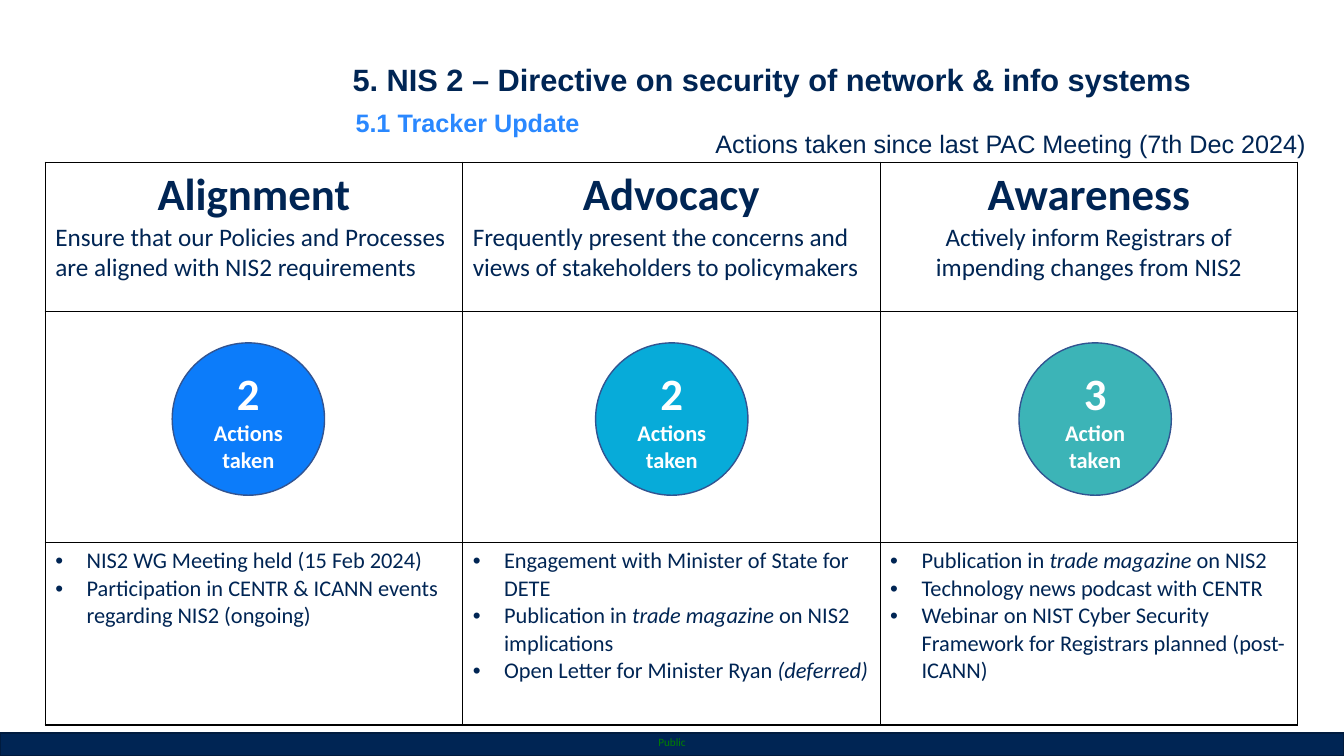
from dataclasses import dataclass

from lxml import etree
from pptx import Presentation
from pptx.dml.color import RGBColor
from pptx.enum.shapes import MSO_SHAPE
from pptx.enum.text import MSO_ANCHOR, MSO_AUTO_SIZE, PP_ALIGN
from pptx.oxml.ns import qn
from pptx.util import Cm, Pt

RECTANGLE, CIRCLE = MSO_SHAPE.RECTANGLE, MSO_SHAPE.OVAL
LEFT, CENTER = PP_ALIGN.LEFT, PP_ALIGN.CENTER
MIDDLE = MSO_ANCHOR.MIDDLE
GROW = MSO_AUTO_SIZE.SHAPE_TO_FIT_TEXT


@dataclass(frozen=True)
class Theme:
    heading_font: str = "Arial"
    body_font: str = "Calibri"
    navy: str = "002554"
    navy_edge: str = "001B3E"
    accent: str = "2A88FF"
    public_green: str = "008000"
    circle_edge: str = "325491"
    white: str = "FFFFFF"
    grid: str = "000000"
    pillar_size: int = 32
    title_size: int = 22
    text_size: int = 18
    action_size: int = 16
    label_size: int = 8


THEME = Theme()

SLIDE_WIDTH, SLIDE_HEIGHT = 33.87, 19.05
TABLE_LEFT, TABLE_TOP = 1.14, 4.09
COLUMN_WIDTH = 10.52
ROW_HEIGHTS = (3.76, 5.82, 4.6)
CIRCLE_LEFT, CIRCLE_TOP = 4.34, 8.64
CIRCLE_STEP, CIRCLE_SIZE = 10.67, 3.84
BULLET_INDENT = 0.79

PILLARS = [
    {
        "name": "Alignment",
        "goal": "Ensure that our Policies and Processes are aligned with NIS2 requirements",
        "goal_align": LEFT,
        "count": "2",
        "caption": "Actions taken",
        "color": "0C7CFA",
        "actions": [
            [("NIS2 WG Meeting held (15 Feb 2024)", False)],
            [("Participation in CENTR & ICANN events regarding NIS2 (ongoing)", False)],
        ],
    },
    {
        "name": "Advocacy",
        "goal": "Frequently present the concerns and views of stakeholders to policymakers",
        "goal_align": LEFT,
        "count": "2",
        "caption": "Actions taken",
        "color": "07ABD9",
        "actions": [
            [("Engagement with Minister of State for DETE", False)],
            [("Publication in ", False), ("trade magazine", True), (" on NIS2 implications", False)],
            [("Open Letter for Minister Ryan ", False), ("(deferred)", True)],
        ],
    },
    {
        "name": "Awareness",
        "goal": "Actively inform Registrars of impending changes from NIS2",
        "goal_align": CENTER,
        "count": "3",
        "caption": "Action taken",
        "color": "3CB4B7",
        "actions": [
            [("Publication in ", False), ("trade magazine", True), (" on NIS2", False)],
            [("Technology news podcast with CENTR", False)],
            [("Webinar on NIST Cyber Security Framework for Registrars planned (post-ICANN)", False)],
        ],
    },
]


def add_run(paragraph, text, size, color=THEME.navy, font=THEME.body_font, bold=False, italic=False):
    run = paragraph.add_run()
    run.text = text
    run.font.name = font
    run.font.size = Pt(size)
    run.font.bold = bold
    run.font.italic = italic
    run.font.color.rgb = RGBColor.from_string(color)


def add_label(slide, text, box, size, color, font=THEME.heading_font, bold=False, align=LEFT, inset=None):
    frame = slide.shapes.add_textbox(*map(Cm, box)).text_frame
    frame.word_wrap = True
    frame.auto_size = GROW
    if inset is not None:
        frame.margin_left = frame.margin_right = Cm(inset)
        frame.margin_top = frame.margin_bottom = Cm(inset)
    line = frame.paragraphs[0]
    line.alignment = align
    add_run(line, text, size, color, font, bold)


def add_filled_shape(slide, kind, box, fill, edge):
    shape = slide.shapes.add_shape(kind, *map(Cm, box))
    shape.shadow.inherit = False
    shape.fill.solid()
    shape.fill.fore_color.rgb = RGBColor.from_string(fill)
    shape.line.color.rgb = RGBColor.from_string(edge)
    shape.line.width = Pt(1)
    return shape


def add_count_circle(slide, left, pillar):
    box = (left, CIRCLE_TOP, CIRCLE_SIZE, CIRCLE_SIZE)
    frame = add_filled_shape(slide, CIRCLE, box, pillar["color"], THEME.circle_edge).text_frame
    frame.word_wrap = True
    frame.vertical_anchor = MIDDLE
    count, caption = frame.paragraphs[0], frame.add_paragraph()
    count.alignment = caption.alignment = CENTER
    add_run(count, pillar["count"], THEME.pillar_size, THEME.white, bold=True)
    add_run(caption, pillar["caption"], THEME.action_size, THEME.white, bold=True)


def outline_cell(cell):
    properties = cell._tc.get_or_add_tcPr()
    for side in ("a:lnL", "a:lnR", "a:lnT", "a:lnB"):
        border = etree.SubElement(properties, qn(side), w=str(Pt(1)))
        fill = etree.SubElement(border, qn("a:solidFill"))
        etree.SubElement(fill, qn("a:srgbClr"), val=THEME.grid)
    cell.fill.background()


def fill_heading(cell, pillar):
    name, goal = cell.text_frame.paragraphs[0], cell.text_frame.add_paragraph()
    name.alignment = CENTER
    goal.alignment = pillar["goal_align"]
    add_run(name, pillar["name"], THEME.pillar_size, bold=True)
    add_run(goal, pillar["goal"], THEME.text_size)


def fill_actions(cell, actions):
    frame = cell.text_frame
    for index, action in enumerate(actions):
        item = frame.add_paragraph() if index else frame.paragraphs[0]
        properties = item._p.get_or_add_pPr()
        properties.set("marL", str(Cm(BULLET_INDENT)))
        properties.set("indent", str(-Cm(BULLET_INDENT)))
        etree.SubElement(properties, qn("a:buFont"), typeface=THEME.heading_font)
        etree.SubElement(properties, qn("a:buChar"), char="•")
        for text, italic in action:
            add_run(item, text, THEME.action_size, italic=italic)


def add_tracker(slide):
    table = slide.shapes.add_table(
        len(ROW_HEIGHTS), len(PILLARS), Cm(TABLE_LEFT), Cm(TABLE_TOP),
        Cm(COLUMN_WIDTH * len(PILLARS)), Cm(sum(ROW_HEIGHTS)),
    ).table
    table.first_row = table.horz_banding = False
    for row, height in zip(table.rows, ROW_HEIGHTS):
        row.height = Cm(height)
    for cell in table.iter_cells():
        outline_cell(cell)
    for column, pillar in enumerate(PILLARS):
        table.columns[column].width = Cm(COLUMN_WIDTH)
        fill_heading(table.cell(0, column), pillar)
        fill_actions(table.cell(2, column), pillar["actions"])


def main():
    deck = Presentation()
    deck.slide_width, deck.slide_height = Cm(SLIDE_WIDTH), Cm(SLIDE_HEIGHT)
    slide = deck.slides.add_slide(deck.slide_layouts[6])

    add_filled_shape(slide, RECTANGLE, (0, 18.47, SLIDE_WIDTH, 0.58), THEME.navy, THEME.navy_edge)
    add_label(slide, "Public", (16.59, 18.54, 0.76, 0.33), THEME.label_size,
              THEME.public_green, THEME.body_font, inset=0)
    add_label(slide, "5. NIS 2 – Directive on security of network & info systems",
              (8.15, 1.4, 22.61, 1.19), THEME.title_size, THEME.navy, bold=True, align=CENTER)
    add_label(slide, "5.1 Tracker Update", (8.71, 2.59, 11.94, 1.02),
              THEME.text_size, THEME.accent, bold=True)
    add_label(slide, "Actions taken since last PAC Meeting (7th Dec 2024)",
              (17.78, 3.1, 16.08, 1.02), THEME.text_size, THEME.navy)

    add_tracker(slide)
    for index, pillar in enumerate(PILLARS):
        add_count_circle(slide, CIRCLE_LEFT + index * CIRCLE_STEP, pillar)

    deck.save("out.pptx")


if __name__ == "__main__":
    main()
